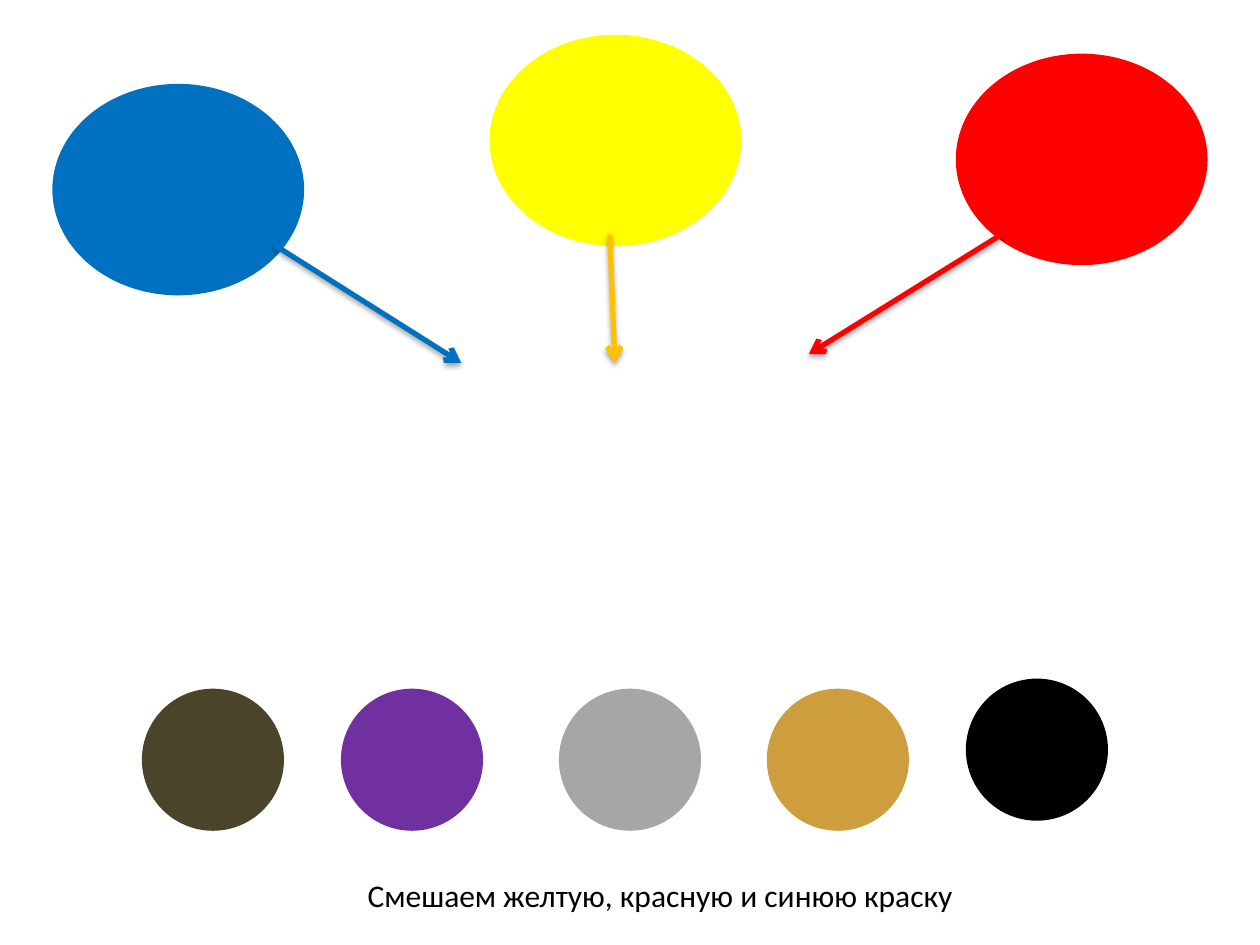
import pptx
import pptx.dml.color
import pptx.enum.shapes
import pptx.enum.text
import pptx.oxml
import pptx.oxml.ns
import pptx.util
from pptx.util import Inches

THEME = {
    "blue": "0070C0", "yellow": "FFFF00", "red": "FF0000", "amber": "FFC000",
    "olive": "4A452A", "violet": "7030A0", "gray": "A6A6A6",
    "ochre": "CE9E3E", "black": "000000",
    "font": "Calibri", "caption_size": 18, "outline": 2, "arrow_line": 3,
}
SHADOW = (
    f'<a:effectLst {pptx.oxml.ns.nsdecls("a")}>'
    '<a:outerShdw blurRad="39370" dist="22860" dir="5400000" rotWithShape="0">'
    '<a:srgbClr val="000000"><a:alpha val="35000"/></a:srgbClr>'
    '</a:outerShdw></a:effectLst>'
)


def color(name):
    return pptx.dml.color.RGBColor.from_string(THEME[name])


def set_line(part, name, width):
    part.line.color.rgb = color(name)
    part.line.width = pptx.util.Pt(width)


deck = pptx.Presentation()
deck.slide_width, deck.slide_height = Inches(10), Inches(7.5)
slide = deck.slides.add_slide(deck.slide_layouts[6])

# Paints to mix, then the possible results: color, left, top, width, height
paint_size, result_size = (1.97, 1.65), (1.1, 1.1)
result_top = 5.48
spots = [
    ("blue", 0.43, 0.68, *paint_size),
    ("yellow", 3.9, 0.29, *paint_size),
    ("red", 7.6, 0.44, *paint_size),
    ("olive", 1.14, result_top, *result_size),
    ("violet", 2.72, result_top, *result_size),
    ("gray", 4.45, result_top, *result_size),
    ("ochre", 6.1, result_top, *result_size),
    ("black", 7.68, 5.4, *result_size),
]
for name, *box in spots:
    spot = slide.shapes.add_shape(
        pptx.enum.shapes.MSO_SHAPE.OVAL, *[Inches(v) for v in box])
    spot.shadow.inherit = False
    spot.fill.solid()
    spot.fill.fore_color.rgb = color(name)
    set_line(spot, name, THEME["outline"])

# Arrows from the paints to the mixing area: color, start, end
pours = [
    ("blue", 2.17, 1.94, 3.66, 2.88),
    ("amber", 4.84, 1.86, 4.88, 2.88),
    ("red", 7.95, 1.86, 6.42, 2.81),
]
for name, *ends in pours:
    pour = slide.shapes.add_connector(
        pptx.enum.shapes.MSO_CONNECTOR.STRAIGHT, *[Inches(v) for v in ends])
    set_line(pour, name, THEME["arrow_line"])
    pour.line._get_or_add_ln().append(pptx.oxml.parse_xml(
        f'<a:tailEnd {pptx.oxml.ns.nsdecls("a")} type="arrow"/>'))
    pour._element.spPr.append(pptx.oxml.parse_xml(SHADOW))

# Caption
caption = slide.shapes.add_textbox(
    Inches(2.82), Inches(6.9), Inches(4.9), Inches(0.4)).text_frame
frame_format = {
    "word_wrap": False,
    "auto_size": pptx.enum.text.MSO_AUTO_SIZE.SHAPE_TO_FIT_TEXT,
}
for key, value in frame_format.items():
    setattr(caption, key, value)
words = caption.paragraphs[0].add_run()
words.text = "Смешаем желтую, красную и синюю краску"
font_format = {"name": THEME["font"], "size": pptx.util.Pt(THEME["caption_size"])}
for key, value in font_format.items():
    setattr(words.font, key, value)
words.font.color.rgb = color("black")

deck.save("out.pptx")
